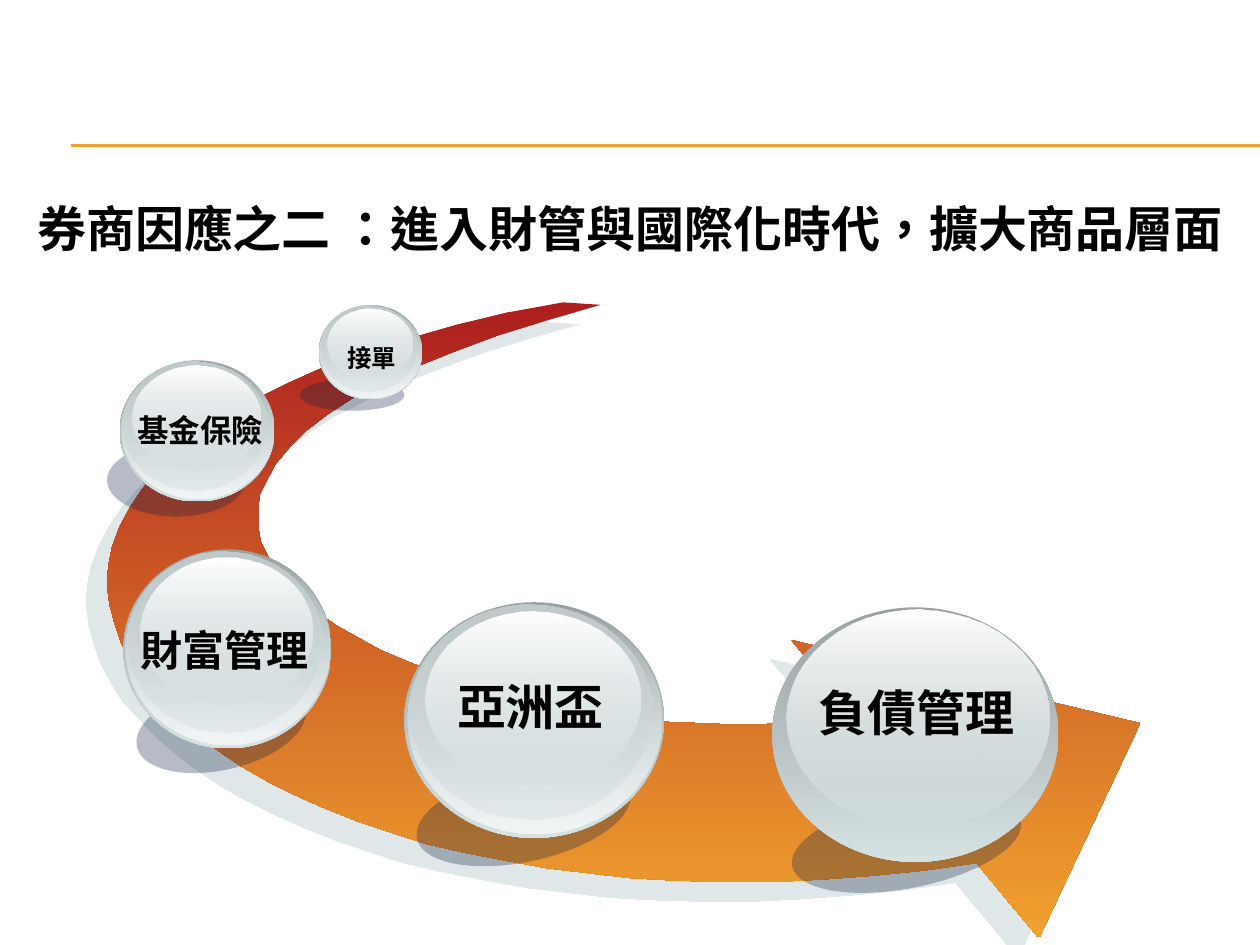
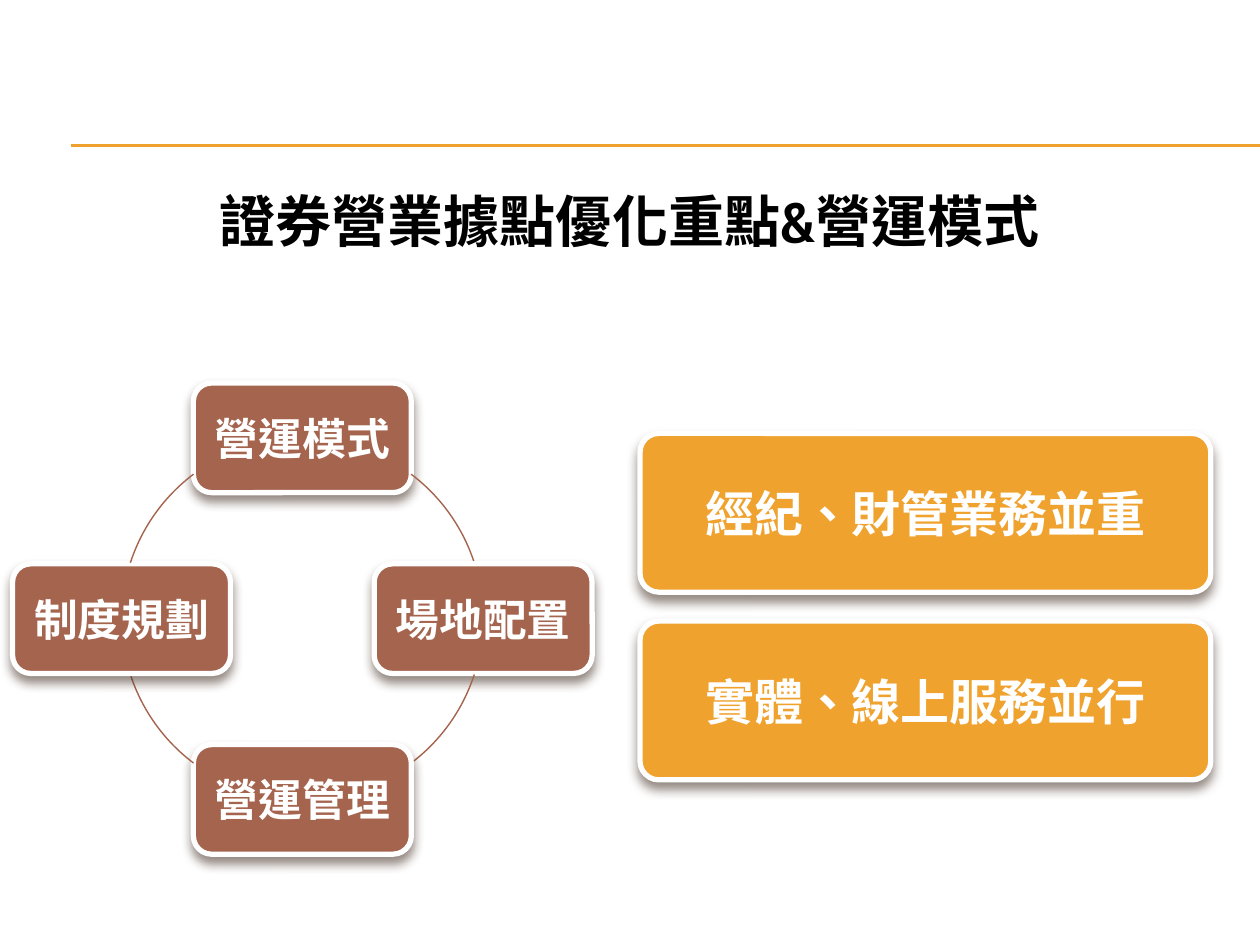
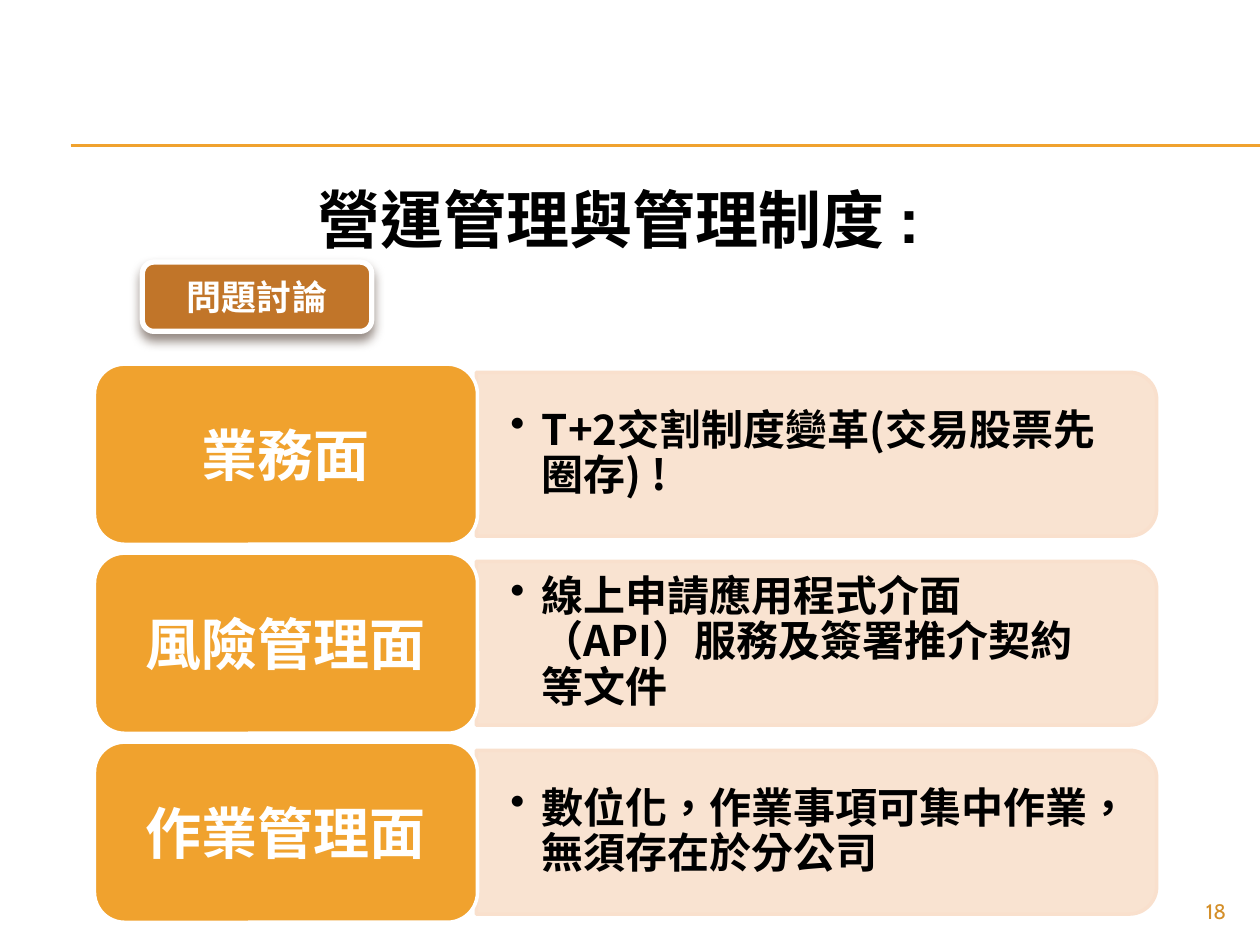
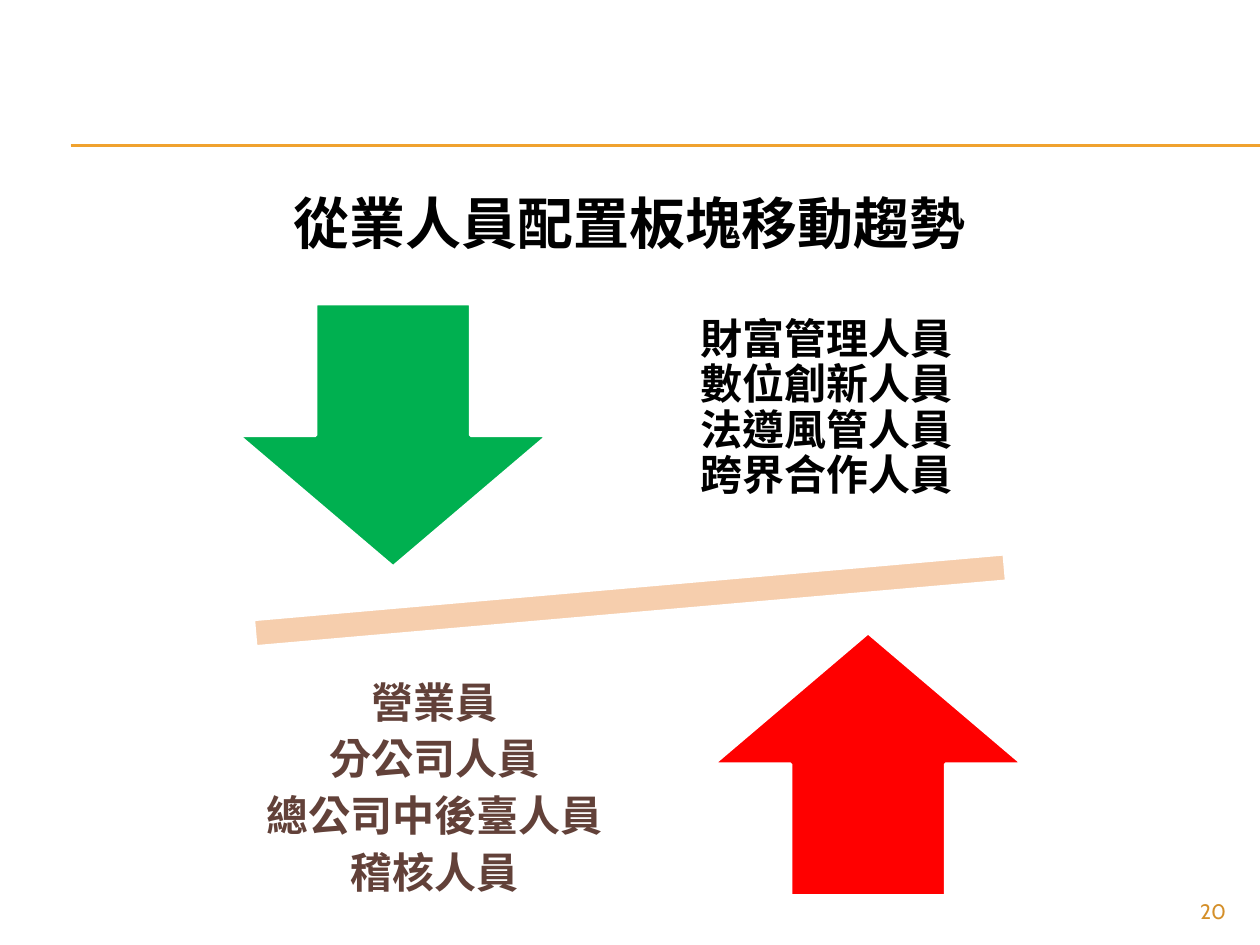
from pptx import Presentation
from pptx.dml.color import RGBColor
from pptx.enum.shapes import MSO_CONNECTOR, MSO_SHAPE
from pptx.enum.text import MSO_ANCHOR, MSO_AUTO_SIZE, PP_ALIGN
from pptx.oxml.ns import qn
from pptx.util import Inches, Pt
from lxml.etree import SubElement

BLACK = RGBColor(0x00, 0x00, 0x00)
WHITE = RGBColor(0xFF, 0xFF, 0xFF)
AMBER = RGBColor(0xF0, 0xA2, 0x2E)
DARK_AMBER = RGBColor(0xC1, 0x75, 0x29)
NUMBER_AMBER = RGBColor(0xD4, 0x8F, 0x29)
CREAM = RGBColor(0xF9, 0xE0, 0xCD)
PEACH = RGBColor(0xF6, 0xCE, 0xAD)
BRICK = RGBColor(0xA5, 0x64, 0x4E)
BROWN = RGBColor(0x62, 0x41, 0x39)
CRIMSON = RGBColor(0xAD, 0x1F, 0x1F)
GREEN = RGBColor(0x00, 0xB0, 0x50)
RED = RGBColor(0xFF, 0x00, 0x00)
NAVY = RGBColor(0x0F, 0x21, 0x45)
STEEL = RGBColor(0x99, 0xA1, 0xA2)
SILVER = RGBColor(0xC1, 0xCB, 0xCC)
MIST = RGBColor(0xD6, 0xE1, 0xE2)
FROST = RGBColor(0xF2, 0xF5, 0xF5)

CJK_FONT = "Noto Sans CJK SC"
CARD_SHADOW = ("4E3B30", 60, 6, 4, 90)  # colour, opacity, blur, distance, angle
SWOOSH_SHADOW = ("C1D1D3", 50, 0, 16.3, 137)

# Slide 1
SWOOSH = [
    (4.47, 2.4), (4.03, 2.48), (3.62, 2.58), (3.24, 2.69), (2.9, 2.8), (2.58, 2.91),
    (2.29, 3.04), (2.03, 3.17), (1.8, 3.3), (1.59, 3.44), (1.41, 3.58), (1.26, 3.73),
    (1.13, 3.88), (1.03, 4.03), (0.95, 4.18), (0.89, 4.34), (0.86, 4.49), (0.85, 4.65),
    (0.87, 4.8), (0.91, 4.95), (0.96, 5.1), (1.04, 5.25), (1.13, 5.4), (1.26, 5.54),
    (1.39, 5.68), (1.55, 5.82), (1.72, 5.95), (1.91, 6.08), (2.12, 6.2), (2.34, 6.31),
    (2.59, 6.42), (2.84, 6.52), (3.11, 6.61), (3.39, 6.7), (3.7, 6.77), (4.01, 6.83),
    (4.34, 6.89), (4.67, 6.93), (5.02, 6.97), (5.38, 6.99), (5.75, 7), (6.14, 7),
    (6.53, 6.98), (6.93, 6.95), (7.33, 6.91), (7.75, 6.85), (8.24, 7.44), (8.25, 7.44),
    (9.05, 5.74), (6.28, 5.08), (6.77, 5.67), (6.54, 5.71), (6.29, 5.73), (6.05, 5.75),
    (5.8, 5.75), (5.55, 5.74), (5.29, 5.73), (5.04, 5.71), (4.79, 5.67), (4.55, 5.64),
    (4.31, 5.59), (4.07, 5.53), (3.84, 5.47), (3.62, 5.4), (3.41, 5.32), (3.21, 5.24),
    (3.02, 5.16), (2.84, 5.06), (2.68, 4.97), (2.53, 4.87), (2.4, 4.76), (2.29, 4.65),
    (2.2, 4.54), (2.13, 4.42), (2.07, 4.3), (2.05, 4.18), (2.05, 4.06), (2.06, 3.93),
    (2.12, 3.81), (2.19, 3.68), (2.3, 3.55), (2.43, 3.42), (2.6, 3.29), (2.8, 3.16),
    (3.04, 3.04), (3.31, 2.91), (3.61, 2.79), (3.96, 2.66), (4.35, 2.54), (4.77, 2.42),
]
# Layers of a glass ball: place as fractions of the ball, then (colour, opacity) stops
BODY = ((0, 0, 1, 1), (STEEL, 100), (MIST, 100))
RIM = ((0.01, 0.01, 0.98, 0.97), (MIST, 0), (FROST, 100))
CORE = ((0.02, 0.01, 0.93, 0.91), (SILVER, 100), (MIST, 48))
GLOSS = ((0.08, 0.04, 0.83, 0.74), (WHITE, 100), (MIST, 38))
WIDE_GLOSS = ((0.05, 0.01, 0.92, 0.85), (WHITE, 100), (MIST, 38))
GLASS = (BODY, RIM, CORE, GLOSS)
BALLS = [  # label, size, label place, ball place, shade place, shade turn, layers
    ("亞洲盃", 28, (3.52, 5.32, 1.38, 0.57), (3.21, 4.78, 2.06, 1.87),
     (3.29, 6.11, 1.73, 0.73), 347.9, GLASS),
    ("財富管理", 24, (0.93, 4.91, 1.71, 0.5), (0.98, 4.36, 1.65, 1.58),
     (1.07, 5.44, 1.37, 0.67), 347.1, GLASS),
    ("基金保險", 18, (0.92, 3.21, 1.34, 0.4), (0.95, 2.86, 1.23, 1.12),
     (0.85, 3.52, 1.1, 0.58), 0, GLASS),
    ("接單", 14, (2.62, 2.67, 0.66, 0.34), (2.53, 2.42, 0.82, 0.75),
     (2.38, 3.01, 0.83, 0.25), 0, GLASS),
    ("負債管理", 28, (6.3, 5.37, 1.95, 0.57), (6.13, 4.82, 2.27, 2.02),
     (6.27, 6.34, 1.85, 0.71), 348.8, (BODY, WIDE_GLOSS)),
]

# Slide 2
CYCLE = [  # label, direction from the centre, start angle of the arc that follows
    ("營運模式", (0, -1), 307), ("場地配置", (1, 0), 18),
    ("營運管理", (0, 1), 127), ("制度規劃", (-1, 0), 198),
]
ARC_SPAN = 35
FOCUS_POINTS = ["經紀、財管業務並重", "實體、線上服務並行"]

# Slide 3
ASPECTS = [
    ("業務面", "T+2交割制度變革(交易股票先圈存) !"),
    ("風險管理面", "線上申請應用程式介面（API）服務及簽署推介契約等文件"),
    ("作業管理面", "數位化，作業事項可集中作業，無須存在於分公司"),
]

# Slide 4
GROWING_STAFF = ["財富管理人員", "數位創新人員", "法遵風管人員", "跨界合作人員"]
SHRINKING_STAFF = ["營業員", "分公司人員", "總公司中後臺人員", "稽核人員"]


def inches(place):
    return [Inches(value) for value in place]


def add_span(para, text, size, color, font=CJK_FONT, bold=True):
    span = para.add_run()
    span.text = text
    span.font.size, span.font.bold, span.font.name = Pt(size), bold, font
    span.font.color.rgb = color
    props = span._r.get_or_add_rPr()
    props.set("lang", "zh-TW")
    SubElement(props, qn("a:ea")).set("typeface", CJK_FONT)


def prepare_frame(shape, inset=(0.1, 0.05, 0.1, 0.05), anchor=MSO_ANCHOR.MIDDLE):
    """Set wrapping, margins and anchor; return the first paragraph, centred."""
    frame = shape.text_frame
    frame.word_wrap = True
    frame.vertical_anchor = anchor
    (frame.margin_left, frame.margin_top,
     frame.margin_right, frame.margin_bottom) = inches(inset)
    para = frame.paragraphs[0]
    para.alignment = PP_ALIGN.CENTER
    return para


def set_opacity(color_element, percent):
    if percent < 100:
        SubElement(color_element, qn("a:alpha")).set("val", str(percent * 1000))


def fill_solid(shape, color, opacity=100):
    shape.fill.solid()
    shape.fill.fore_color.rgb = color
    set_opacity(next(shape.element.spPr.iter(qn("a:srgbClr"))), opacity)


def fill_downwards(shape, *stops):
    """Fill with a top-to-bottom gradient of (colour, opacity) stops."""
    shape.fill.gradient()
    shape.fill.gradient_angle = 270
    for stop, (color, _) in zip(shape.fill.gradient_stops, stops):
        stop.color.rgb = color
    elements = list(shape.element.spPr.iter(qn("a:srgbClr")))
    for element, (_, opacity) in zip(elements, stops):
        set_opacity(element, opacity)


def set_shadow(shape, shadow):
    shape.shadow.inherit = False
    if shadow:
        color, opacity, blur, distance, angle = shadow
        outer = SubElement(shape.element.spPr.find(qn("a:effectLst")), qn("a:outerShdw"),
                           blurRad=str(Pt(blur)), dist=str(Pt(distance)),
                           dir=str(angle * 60000), algn="ctr", rotWithShape="0")
        set_opacity(SubElement(outer, qn("a:srgbClr"), val=color), opacity)


def add_figure(page, kind, place, fill=None, line=None, width=2, opacity=100,
               shadow=None, turn=0):
    shape = page.shapes.add_shape(kind, *inches(place))
    shape.rotation = turn
    if fill is None:
        shape.fill.background()
    else:
        fill_solid(shape, fill, opacity)
    if line is None:
        shape.line.fill.background()
    else:
        shape.line.color.rgb = line
        shape.line.width = Pt(width)
    set_shadow(shape, shadow)
    return shape


def add_card(page, place, text, size, fill, width=3, shadow=CARD_SHADOW, corner=None):
    card = add_figure(page, MSO_SHAPE.ROUNDED_RECTANGLE, place, fill, WHITE, width,
                      shadow=shadow)
    if corner:
        card.adjustments[0] = corner
    add_span(prepare_frame(card), text, size, WHITE)


def add_page(deck, title, title_place, size, font, number=None, inset=(0.1, 0.05, 0.1, 0.05)):
    page = deck.slides.add_slide(deck.slide_layouts[6])
    for y in (1.15, 1.16):
        rule = page.shapes.add_connector(MSO_CONNECTOR.STRAIGHT,
                                         *inches((0.56, y, 10, y)))
        rule.line.color.rgb = AMBER
        rule.line.width = Pt(0.75)
        SubElement(rule.element.spPr, qn("a:effectLst"))
    box = page.shapes.add_textbox(*inches(title_place))
    add_span(prepare_frame(box, inset), title, size, BLACK, font)
    if number:
        box = page.shapes.add_textbox(*inches((9, 7.08, 0.83, 0.27)))
        para = prepare_frame(box, anchor=MSO_ANCHOR.TOP)
        para.alignment = PP_ALIGN.RIGHT
        add_span(para, number, 12, NUMBER_AMBER, "Cabin", bold=False)
    return page


def add_ball(page, label, size, label_place, ball_place, shade_place, turn, layers):
    add_figure(page, MSO_SHAPE.OVAL, shade_place, NAVY, opacity=30, turn=turn)
    left, top, width, height = ball_place
    for (x, y, w, h), *stops in layers:
        place = (left + x * width, top + y * height, w * width, h * height)
        fill_downwards(add_figure(page, MSO_SHAPE.OVAL, place), *stops)
    box = page.shapes.add_textbox(*inches(label_place))
    add_span(prepare_frame(box, anchor=MSO_ANCHOR.TOP), label, size, BLACK)
    box.text_frame.word_wrap = False
    box.text_frame.auto_size = MSO_AUTO_SIZE.SHAPE_TO_FIT_TEXT


def build_product_path(deck):
    page = add_page(deck, "券商因應之二 ：進入財管與國際化時代，擴大商品層面",
                    (0, 1.36, 10, 0.89), 28, "Arial")
    start, *rest = [inches(point) for point in SWOOSH]
    builder = page.shapes.build_freeform(*start)
    builder.add_line_segments(rest, close=True)
    swoosh = builder.convert_to_shape()
    fill_downwards(swoosh, (CRIMSON, 100), (AMBER, 100))
    swoosh.line.fill.background()
    set_shadow(swoosh, SWOOSH_SHADOW)
    for ball in BALLS:
        add_ball(page, *ball)


def build_operating_cycle(deck):
    page = add_page(deck, "證券營業據點優化重點&營運模式", (0, 1.39, 10, 0.71), 32, "Cabin")
    center_x, center_y, radius = 2.4, 4.91, 1.435
    width, height = 1.73, 0.87
    ring = (center_x - radius, center_y - radius, 2 * radius, 2 * radius)
    for label, (across, down), angle in CYCLE:
        place = (center_x + across * radius - width / 2,
                 center_y + down * radius - height / 2, width, height)
        add_card(page, place, label, 25, BRICK)
        arc = add_figure(page, MSO_SHAPE.ARC, ring, line=BRICK, width=0.79)
        for index, degrees in enumerate((angle, (angle + ARC_SPAN) % 360)):
            arc.adjustments[index] = degrees * 0.6
    for index, point in enumerate(FOCUS_POINTS):
        add_card(page, (5.08, 3.44 + 1.49 * index, 4.53, 1.26), point, 28, AMBER,
                 corner=0.118)


def build_management(deck):
    page = add_page(deck, "營運管理與管理制度 :", (0.1, 1.37, 9.9, 0.73), 36, "Arial",
                    "18", inset=(0.1, 0.05, 0.38, 0.05))
    card_height, bar_length, bar_height = 1.43, 5.4, 1.3
    for index, (aspect, issue) in enumerate(ASPECTS):
        top = 2.89 + 1.5 * index
        middle = top + card_height / 2
        bar_center = 3.78 + bar_length / 2
        add_figure(page, MSO_SHAPE.ROUND_2_SAME_RECTANGLE,
                   (bar_center - bar_height / 2, middle - bar_length / 2,
                    bar_height, bar_length), CREAM, CREAM, opacity=90, turn=90)
        box = page.shapes.add_textbox(*inches((3.78, middle - 0.58, 5.33, 1.16)))
        para = prepare_frame(box, (0.27, 0.14, 0.27, 0.14))
        para.alignment = PP_ALIGN.LEFT
        para.level = 1
        para.line_spacing = 0.9
        props = para._p.get_or_add_pPr()
        props.set("marL", str(Inches(0.25)))
        props.set("indent", str(-Inches(0.25)))
        SubElement(props, qn("a:buChar")).set("char", "•")
        add_span(para, issue, 24, BLACK)
        add_card(page, (0.75, top, 3.04, card_height), aspect, 32, AMBER, 2, None)
    add_card(page, (1.13, 2.08, 1.82, 0.55), "問題討論", 20, DARK_AMBER)


def build_staff_shift(deck):
    page = add_page(deck, "從業人員配置板塊移動趨勢", (0, 1.36, 10, 0.81), 32, "Cabin", "20")
    add_figure(page, MSO_SHAPE.MATH_MINUS, (0.93, 4.3, 8.14, 0.93), PEACH, WHITE, turn=355)
    add_figure(page, MSO_SHAPE.DOWN_ARROW, (1.89, 2.41, 2.46, 2.09), GREEN, WHITE)
    add_figure(page, MSO_SHAPE.UP_ARROW, (5.66, 5.02, 2.46, 2.09), RED, WHITE)
    inset = (0.19, 0.19, 0.19, 0.19)

    box = page.shapes.add_textbox(*inches((5.25, 2.15, 2.62, 2.19)))
    para = prepare_frame(box, inset)
    para.line_spacing = 0.9
    for index, staff in enumerate(GROWING_STAFF):
        if index:
            para.add_line_break()
        add_span(para, staff, 24, BLACK)

    box = page.shapes.add_textbox(*inches((1.77, 5.18, 3.35, 2.19)))
    para = prepare_frame(box, inset)
    for index, staff in enumerate(SHRINKING_STAFF):
        if index:
            para = box.text_frame.add_paragraph()
        para.alignment = PP_ALIGN.CENTER
        para.line_spacing = Pt(24)
        para.space_after = Pt(8.4)
        add_span(para, staff, 24, BROWN)


def main():
    deck = Presentation()
    deck.slide_width, deck.slide_height = Inches(10), Inches(7.5)
    build_product_path(deck)
    build_operating_cycle(deck)
    build_management(deck)
    build_staff_shift(deck)
    deck.save("out.pptx")


if __name__ == "__main__":
    main()
